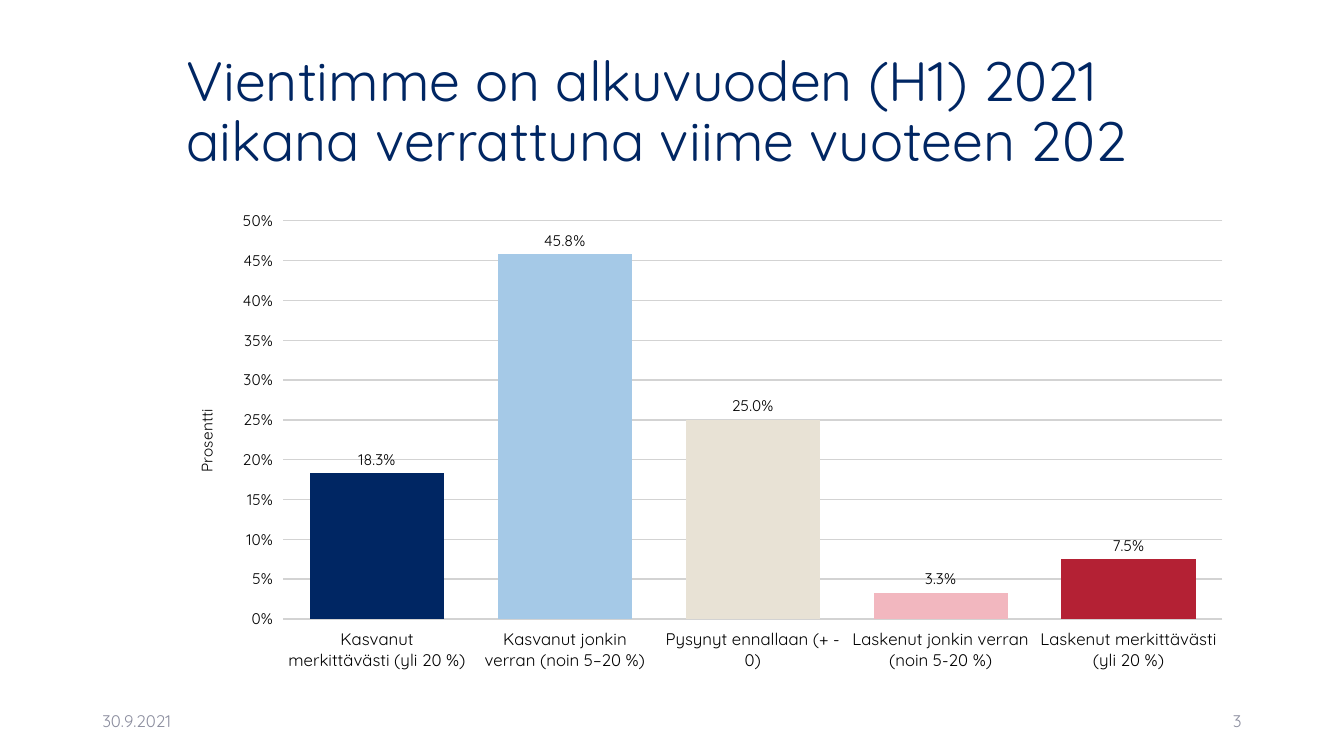
"""Build a slide with a column chart of export development in H1 2021."""
from lxml.etree import SubElement
from pptx import Presentation
from pptx.chart.data import CategoryChartData
from pptx.dml.color import RGBColor
from pptx.enum.chart import XL_CHART_TYPE as ChartType
from pptx.enum.chart import XL_LABEL_POSITION as LabelPosition
from pptx.enum.chart import XL_TICK_MARK as TickMark
from pptx.enum.text import MSO_ANCHOR as Anchor
from pptx.enum.text import PP_ALIGN as Align
from pptx.oxml import parse_xml
from pptx.oxml.ns import nsdecls, qn
from pptx.util import Pt

FONT = "Quicksand"
COLORS = {
    "navy": "002663",
    "sky": "A5C9E7",
    "sand": "E8E2D5",
    "pink": "F2B7BF",
    "red": "B42134",
    "grid": "D3D3D3",
    "footer": "8C8E9F",
    "black": "000000",
    "white": "FFFFFF",
}
ANSWERS = [
    ("Kasvanut merkittävästi (yli 20 %)", 0.183, "navy"),
    ("Kasvanut jonkin verran (noin 5–20 %)", 0.458, "sky"),
    ("Pysynyt ennallaan (+ - 0)", 0.25, "sand"),
    ("Laskenut jonkin verran (noin 5-20 %)", 0.033, "pink"),
    ("Laskenut merkittävästi (yli 20 %)", 0.075, "red"),
]
LEFT, WIDTH = Pt(126), Pt(762.5)


def color(name):
    return RGBColor.from_string(COLORS[name])


def set_font(font, size, name):
    font.name = FONT
    font.size = Pt(size)
    font.bold = False
    font.color.rgb = color(name)


deck = Presentation()
deck.slide_width, deck.slide_height = Pt(960), Pt(540)
page = deck.slides.add_slide(deck.slide_layouts[5])

title = page.shapes.title
title.left, title.top, title.width, title.height = LEFT, Pt(28.8), WIDTH, Pt(104.4)
title.text_frame.text = "Vientimme on alkuvuoden (H1) 2021 aikana verrattuna viime vuoteen 202"
title.text_frame.vertical_anchor = Anchor.MIDDLE
para = title.text_frame.paragraphs[0]
para.alignment = Align.LEFT
para.line_spacing = 0.9
set_font(para.font, 39.6, "navy")

for text, left, alignment in [("30.9.2021", 66, Align.LEFT), ("3", 678, Align.RIGHT)]:
    box = page.shapes.add_textbox(Pt(left), Pt(500.5), Pt(216), Pt(28.75))
    box.text_frame.word_wrap = True
    box.text_frame.vertical_anchor = Anchor.MIDDLE
    para = box.text_frame.paragraphs[0]
    para.text = text
    para.alignment = alignment
    set_font(para.font, 12, "footer")

data = CategoryChartData(number_format="0.0%")
data.categories = [answer for answer, share, fill in ANSWERS]
data.add_series("Series 1", [share for answer, share, fill in ANSWERS])
frame = page.shapes.add_chart(
    ChartType.COLUMN_CLUSTERED, LEFT, Pt(144), WIDTH, Pt(342.7), data
)
chart = frame.chart
chart.has_title = False
chart.has_legend = False
set_font(chart.font, 11, "black")

plot = chart.plots[0]
plot.gap_width = 40
plot.vary_by_categories = False
plot.has_data_labels = True
labels = plot.data_labels
labels.show_value = True
labels.number_format = "0.0%"
labels.number_format_is_linked = False
labels.position = LabelPosition.OUTSIDE_END
set_font(labels.font, 11, "black")

for index, (answer, share, fill) in enumerate(ANSWERS):
    column = plot.series[0].points[index].format
    column.fill.solid()
    column.fill.fore_color.rgb = color(fill)

answer_axis, share_axis = chart.category_axis, chart.value_axis
for axis, size in [(answer_axis, 12), (share_axis, 11)]:
    axis.format.line.fill.background()
    axis.major_tick_mark = TickMark.OUTSIDE
    set_font(axis.tick_labels.font, size, "black")

share_axis.minimum_scale, share_axis.maximum_scale = 0, 0.5
share_axis.major_unit = 0.05
share_axis.tick_labels.number_format = "0%"
share_axis.tick_labels.number_format_is_linked = False
share_axis.has_major_gridlines = True
share_axis.major_gridlines.format.line.color.rgb = color("grid")
share_axis.major_gridlines.format.line.width = Pt(1)
share_axis.has_title = True
share_axis.axis_title.text_frame.text = "Prosentti"
set_font(share_axis.axis_title.text_frame.paragraphs[0].font, 11, "black")

plot_area = chart.element.find(".//" + qn("c:plotArea"))
layout = parse_xml(f"<c:layout {nsdecls('c')}><c:manualLayout/></c:layout>")
for tag, value in [
    ("layoutTarget", "inner"), ("xMode", "edge"), ("yMode", "edge"),
    ("x", "0.1"), ("y", "0.04"), ("w", "0.88"), ("h", "0.83"),
]:
    SubElement(layout[0], qn("c:" + tag)).set("val", value)
plot_area.insert(0, layout)
plot_area.append(parse_xml(
    f"<c:spPr {nsdecls('c', 'a')}><a:solidFill>"
    f"<a:srgbClr val=\"{COLORS['white']}\"/></a:solidFill></c:spPr>"
))

deck.save("out.pptx")
